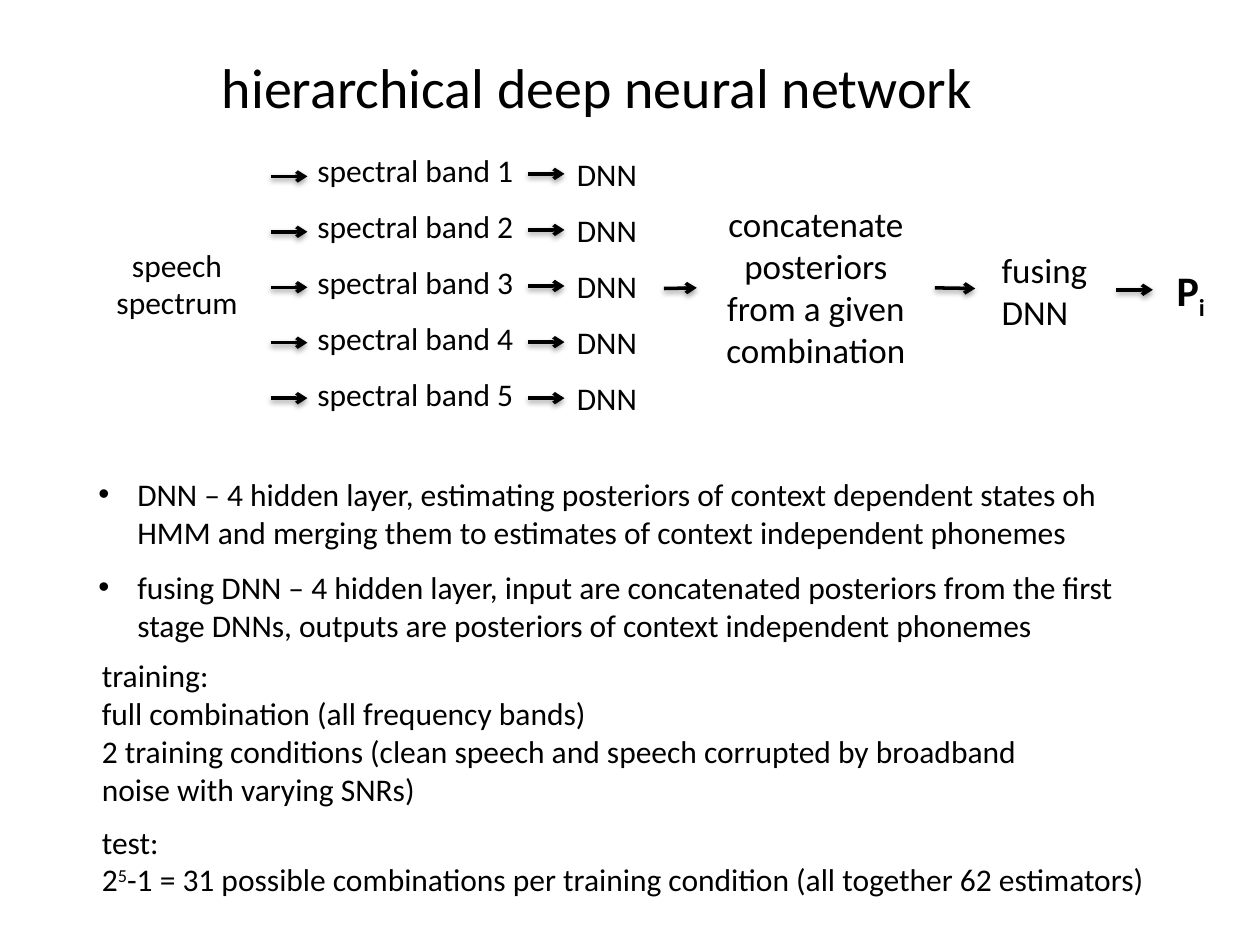
from dataclasses import dataclass
from typing import Optional

from lxml.etree import SubElement
from pptx import Presentation
from pptx.dml.color import RGBColor
from pptx.enum.shapes import MSO_CONNECTOR
from pptx.enum.text import MSO_ANCHOR, MSO_AUTO_SIZE, PP_ALIGN
from pptx.oxml.ns import qn
from pptx.util import Inches, Pt

INK = "000000"
FONT = "Calibri"
ROWS = 5
STEP = 0.445


@dataclass
class Label:
    left: float
    top: float
    width: float
    height: float
    lines: list
    size: int = 18
    align: PP_ALIGN = PP_ALIGN.LEFT
    bold: bool = False
    wrap: bool = False


@dataclass
class Arrow:
    left: float
    top: float
    source: Optional[object] = None
    target: Optional[object] = None
    length: float = 0.29


def paint(color, code: str) -> None:
    color.rgb = RGBColor.from_string(code)


def write(frame, lines: list, *, size: int = 18, align=PP_ALIGN.LEFT,
          bold: bool = False, gap: float = 0) -> None:
    for row, line in enumerate(lines):
        para = frame.paragraphs[0] if row == 0 else frame.add_paragraph()
        para.alignment = align
        para.space_before = Pt(gap if row else 0)
        parts = [(line, 0)] if isinstance(line, str) else line
        for text, shift in parts:
            run = para.add_run()
            run.text = text
            run.font.name = FONT
            run.font.size = Pt(size)
            run.font.bold = bold
            paint(run.font.color, INK)
            if shift:
                run.font._element.set("baseline", str(shift * 1000))


def place(shape, left: float, top: float, width: float, height: float) -> None:
    shape.left, shape.top = Inches(left), Inches(top)
    shape.width, shape.height = Inches(width), Inches(height)


def draw_label(slide, item: Label):
    box = slide.shapes.add_textbox(Inches(item.left), Inches(item.top),
                                   Inches(item.width), Inches(item.height))
    frame = box.text_frame
    frame.word_wrap = item.wrap
    frame.auto_size = MSO_AUTO_SIZE.SHAPE_TO_FIT_TEXT
    write(frame, item.lines, size=item.size, align=item.align, bold=item.bold)
    return box


def draw_arrow(slide, item: Arrow) -> None:
    line = slide.shapes.add_connector(
        MSO_CONNECTOR.STRAIGHT, Inches(item.left), Inches(item.top),
        Inches(item.left + item.length), Inches(item.top))
    if item.source is not None:
        line.begin_connect(item.source, 3)
    if item.target is not None:
        line.end_connect(item.target, 1)
    paint(line.line.color, INK)
    line.line.width = Pt(2)
    SubElement(line.line._get_or_add_ln(), qn("a:tailEnd"), type="arrow")
    effects = SubElement(line._element.spPr, qn("a:effectLst"))
    shade = SubElement(effects, qn("a:outerShdw"), blurRad="40000",
                       dist="20000", dir="5400000", rotWithShape="0")
    tint = SubElement(shade, qn("a:srgbClr"), val=INK)
    SubElement(tint, qn("a:alpha"), val="38000")


def draw_title(slide) -> None:
    title = slide.shapes.title
    place(title, 0.24, 0.24, 9, 0.89)
    title.text_frame.vertical_anchor = MSO_ANCHOR.MIDDLE
    write(title.text_frame, ["hierarchical deep neural network"],
          size=32, align=PP_ALIGN.CENTER)


def draw_list(slide) -> None:
    body = slide.placeholders[1]
    place(body, 0.68, 3.72, 8.75, 1.45)
    frame = body.text_frame
    frame.auto_size = MSO_AUTO_SIZE.NONE
    write(frame, [
        "DNN – 4 hidden layer, estimating posteriors of context dependent "
        "states oh HMM and merging them to estimates of context independent "
        "phonemes",
        "fusing DNN – 4 hidden layer, input are concatenated posteriors from "
        "the first stage DNNs, outputs are posteriors of context independent "
        "phonemes",
    ], gap=10)
    for para in frame.paragraphs:
        props = para._p.get_or_add_pPr()
        props.set("marL", str(Inches(0.31)))
        props.set("indent", str(Inches(-0.31)))
        SubElement(props, qn("a:buChar"), char="•")


def draw_bands(slide) -> None:
    for row in range(ROWS):
        drop = row * STEP
        draw_label(slide, Label(2.42, 1.15 + drop, 1.78, 0.4,
                                [f"spectral band {row + 1}"]))
        net = draw_label(slide, Label(4.48, 1.18 + drop, 0.68, 0.4, ["DNN"]))
        draw_arrow(slide, Arrow(2.15, 1.4 + row * 0.44))
        draw_arrow(slide, Arrow(4.19, 1.38 + drop, target=net))


def draw_fusion(slide) -> None:
    draw_label(slide, Label(0.82, 1.9, 1.17, 0.71, ["speech", "spectrum"],
                            align=PP_ALIGN.CENTER))
    merge = draw_label(slide, Label(
        5.53, 1.56, 1.89, 1.45,
        ["concatenate", "posteriors from a given combination"],
        size=20, align=PP_ALIGN.CENTER, wrap=True))
    draw_label(slide, Label(7.85, 1.92, 0.89, 0.77, ["fusing", "DNN"], size=20))
    draw_label(slide, Label(9.24, 2.05, 0.44, 0.5, [[("P", 0), ("i", -25)]],
                            size=24, bold=True))
    draw_arrow(slide, Arrow(5.27, 2.29, target=merge))
    draw_arrow(slide, Arrow(7.45, 2.29, source=merge))
    draw_arrow(slide, Arrow(8.86, 2.3))


def draw_notes(slide) -> None:
    draw_label(slide, Label(0.71, 5.16, 8.03, 1.31, [
        "training:",
        "full combination (all frequency bands)",
        "2 training conditions (clean speech and speech corrupted by "
        "broadband noise with varying SNRs)",
    ], wrap=True))
    draw_label(slide, Label(0.71, 6.48, 8.52, 0.71, [
        "test:",
        [("2", 0), ("5", 30),
         ("-1 = 31 possible combinations per training condition "
          "(all together 62 estimators)", 0)],
    ]))


def main() -> None:
    deck = Presentation()
    deck.slide_width, deck.slide_height = Inches(10), Inches(7.5)
    slide = deck.slides.add_slide(deck.slide_layouts[1])
    draw_title(slide)
    draw_bands(slide)
    draw_fusion(slide)
    draw_list(slide)
    draw_notes(slide)
    deck.save("out.pptx")


if __name__ == "__main__":
    main()
